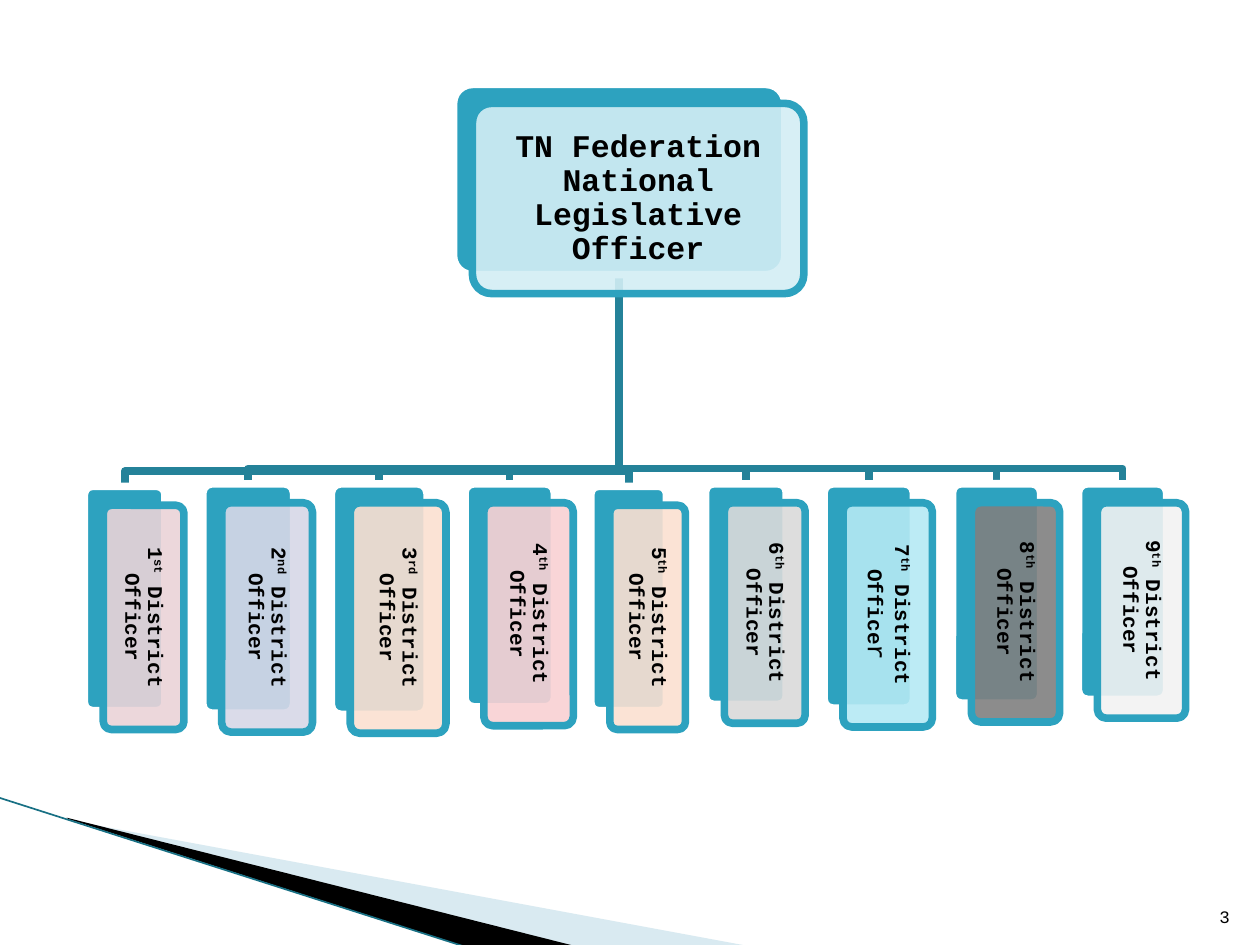
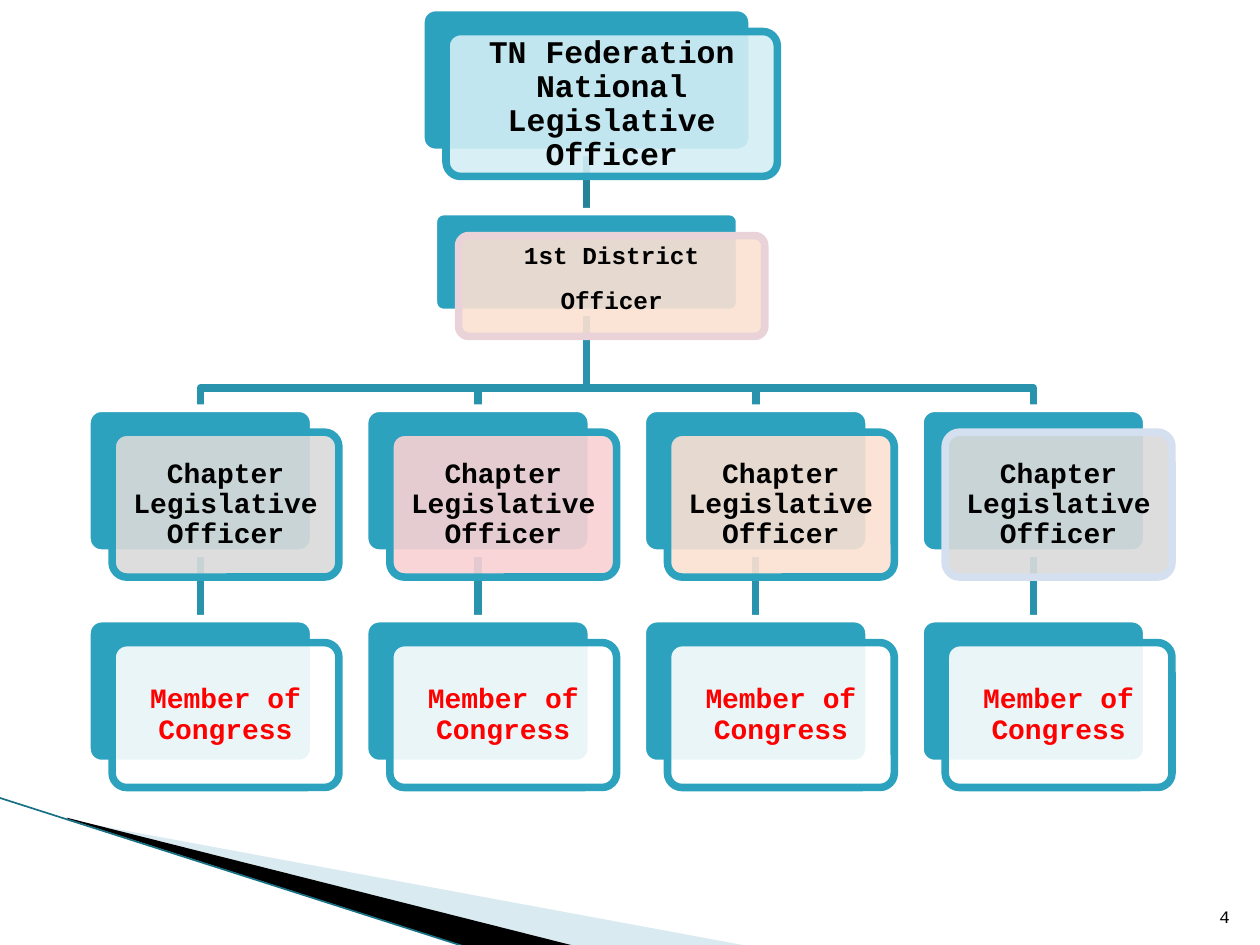
from lxml.etree import SubElement
from pptx import Presentation
from pptx.dml.color import RGBColor
from pptx.enum.shapes import MSO_CONNECTOR, MSO_SHAPE
from pptx.enum.text import MSO_ANCHOR, PP_ALIGN
from pptx.oxml.ns import qn
from pptx.util import Inches, Pt

FONT = "Courier New"
EDGE = 4.33
CELL = Inches(0.1)  # the slide is a grid of 100 columns by 75 rows
HUES = {
    "teal": "2DA2BF", "deep": "248299", "mid": "2993AD", "rule": "187084",
    "wedge": "A0CBDC", "ice": "D3EEF5", "rose": "EAD3D8", "lilac": "D7D8E7",
    "peach": "FBE0D1", "pink": "F9D1D3", "grey": "DADADA", "aqua": "B5E9F4",
    "slate": "808080", "pale": "F2F2F2", "mist": "D4DFEF",
    "white": "FFFFFF", "black": "000000", "red": "FF0000",
}
HEAD = "TN Federation National Legislative Officer"

# column, row, width, height, face colour, ordinal ending
DISTRICTS = [
    (6.7, 38.6, 6.4, 17.8, "rose", "st"),
    (16.1, 38.4, 7.2, 18.2, "lilac", "nd"),
    (26.3, 38.4, 7.6, 18.3, "peach", "rd"),
    (36.9, 38.4, 7.1, 17.7, "pink", "th"),
    (46.9, 38.6, 6, 17.8, "peach", "th"),
    (56, 38.4, 6.4, 17.5, "grey", "th"),
    (65.4, 38.4, 7.1, 17.8, "aqua", "th"),
    (75.6, 38.4, 7, 17.4, "slate", "th"),
    (85.6, 38.4, 7, 17.1, "pale", "th"),
]
# face colour, edge colour
CHAPTERS = [("grey", "teal"), ("pink", "teal"), ("peach", "teal"), ("grey", "mist")]


def grid(*cells):
    return [round(n * CELL) for n in cells]


def rgb(name):
    return RGBColor.from_string(HUES[name])


def fade(shape, share):
    """Make the fill of a shape see-through; share is its opacity in percent."""
    hue = shape.element.find(".//" + qn("a:srgbClr"))
    SubElement(hue, qn("a:alpha")).set("val", str(share * 1000))


def paint(shape, fill=None, edge=None, width=EDGE):
    shape.shadow.inherit = False
    if fill:
        shape.fill.solid()
        shape.fill.fore_color.rgb = rgb(fill)
    else:
        shape.fill.background()
    if edge:
        shape.line.color.rgb = rgb(edge)
        shape.line.width = Pt(width)
    else:
        shape.line.fill.background()


def style(run, size, hue="black", bold=True):
    run.font.name = FONT
    run.font.size = Pt(size)
    run.font.bold = bold
    run.font.color.rgb = rgb(hue)


def raised(shape, part):
    """Lift one run of a shape's text to superscript."""
    shape.element.findall(".//" + qn("a:rPr"))[part].set("baseline", "30000")


def outline(slide, points, close):
    points = [grid(*point) for point in points]
    pen = slide.shapes.build_freeform(*points[0], scale=1.0)
    pen.add_line_segments(points[1:], close=close)
    return pen.convert_to_shape()


def rule(slide, start, end, hue, width):
    line = slide.shapes.add_connector(MSO_CONNECTOR.STRAIGHT, *grid(*start, *end))
    line.line.color.rgb = rgb(hue)
    line.line.width = Pt(width)
    SubElement(line.element.spPr, qn("a:effectLst"))
    return line


def frame(deck, number):
    """Add a blank slide with the corner wedges and the page number."""
    slide = deck.slides.add_slide(deck.slide_layouts[6])
    light = outline(slide, [(5.5, 65.1), (59.5, 75.1), (45.6, 75.1), (5.5, 65)], True)
    paint(light, "wedge")
    fade(light, 40)
    dark = outline(slide, [(5.3, 64.9), (45.7, 75.1), (37.2, 75.2), (5.4, 65)], True)
    paint(dark, "black")
    rule(slide, (-0.1, 63.3), (37.1, 75.2), "rule", 0.95)

    page = slide.shapes.add_textbox(*grid(94.6, 70.1, 4, 4)).text_frame
    page.word_wrap = True
    page.vertical_anchor = MSO_ANCHOR.BOTTOM
    page.text = str(number)
    page.paragraphs[0].alignment = PP_ALIGN.RIGHT
    style(page.paragraphs[0].runs[0], 10, bold=False)
    return slide


def card(slide, place, shift, fill, parts, size, edge="teal", hue="black", inset=0.7):
    """Draw a backing plate with a shifted, labelled face; return both."""
    left, top, wide, high = place
    spots = [place, (left + shift[0], top + shift[1], wide, high)]
    back, face = [
        slide.shapes.add_shape(MSO_SHAPE.ROUNDED_RECTANGLE, *grid(*spot))
        for spot in spots
    ]
    for shape in (back, face):
        shape.adjustments[0] = 0.1
    paint(back, "teal", "white")
    paint(face, fill, edge)
    fade(face, 90)

    frame = face.text_frame
    frame.word_wrap = True
    frame.vertical_anchor = MSO_ANCHOR.MIDDLE
    frame.margin_left, frame.margin_top, frame.margin_right, frame.margin_bottom = grid(*[inset] * 4)
    para = frame.paragraphs[0]
    para.alignment = PP_ALIGN.CENTER
    para.line_spacing = 0.9
    for part in parts:
        run = para.add_run()
        run.text = part
        style(run, size, hue)
    return back, face


def sink(shape):
    """Send a link behind the cards."""
    shape.element.getparent().insert(2, shape.element)


def drop(slide, upper, lower, hue):
    line = rule(slide, (0, 0), (1, 1), hue, EDGE)
    line.begin_connect(upper, 2)
    line.end_connect(lower, 0)
    sink(line)


def branch(slide, upper, lower, rise, hue):
    """Link two plates by an elbow that turns a given rise above the lower one."""
    start, end = [(box.left + box.width / 2) / CELL for box in (upper, lower)]
    base, top = (upper.top + upper.height) / CELL, lower.top / CELL
    turn = top - rise
    elbow = outline(slide, [(start, base), (start, turn), (end, turn), (end, top)], False)
    paint(elbow, edge=hue)
    sink(elbow)


def districts(deck):
    slide = frame(deck, 3)
    shift = (1.5, 1.5)
    head, _ = card(slide, (36, 6.7, 26.3, 15.1), shift, "ice", [HEAD], 18)
    for number, (*place, fill, ending) in enumerate(DISTRICTS, 1):
        parts = [str(number), ending, " District Officer"]
        if number == 7:
            parts[2:] = [" District Office", "r"]
        back, face = card(slide, place, shift, fill, parts, 12, inset=0.5)
        face.element.find(".//" + qn("a:bodyPr")).set("vert", "vert")
        raised(face, 1)
        if number == 7:
            style(face.text_frame.paragraphs[0].runs[3], 15, bold=False)
        branch(slide, head, back, 1.2, "deep")


def chapters(deck):
    slide = frame(deck, 4)
    shift = (2, 1.9)
    wide, high, step = 18, 11.5, 22.04
    head, _ = card(slide, (33.4, 0.6, 26.3, high), shift, "ice", [HEAD], 18)
    first, face = card(slide, (34.4, 16.8, 24.3, 8), shift, "peach",
                       ["1st District Officer"], 24, edge="rose", inset=1)
    raised(face, 0)
    drop(slide, head, first, "deep")
    for index, (fill, edge) in enumerate(CHAPTERS):
        left = 6.9 + step * index
        chief, _ = card(slide, (left, 32.4, wide, high), shift, fill,
                        ["Chapter Legislative Officer"], 16, edge=edge)
        member, _ = card(slide, (left, 49.1, wide, high), shift, "white",
                         ["Member of Congress"], 16, hue="red")
        branch(slide, first, chief, 1.6, "mid")
        drop(slide, chief, member, "mid")


def main():
    deck = Presentation()
    deck.slide_width, deck.slide_height = grid(100, 75)
    districts(deck)
    chapters(deck)
    deck.save("out.pptx")


if __name__ == "__main__":
    main()
